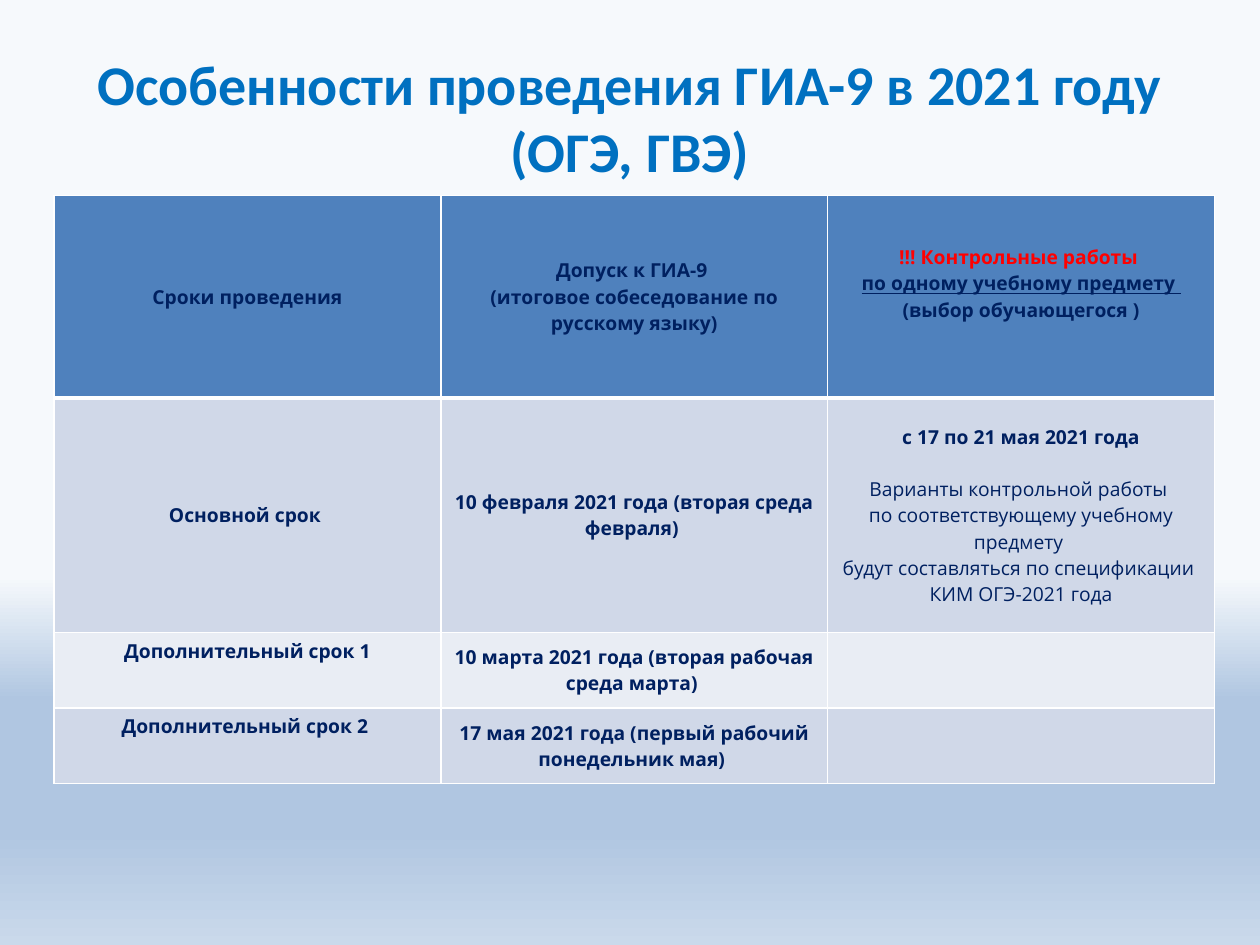
from dataclasses import dataclass

from lxml import etree
from pptx import Presentation
from pptx.dml.color import RGBColor
from pptx.enum.text import MSO_ANCHOR, MSO_AUTO_SIZE, PP_ALIGN
from pptx.oxml.ns import qn
from pptx.util import Inches, Pt

CENTER = PP_ALIGN.CENTER
TOP, MIDDLE = MSO_ANCHOR.TOP, MSO_ANCHOR.MIDDLE
NO_AUTOFIT = MSO_AUTO_SIZE.NONE


@dataclass(frozen=True)
class Theme:
    title_font: str = "Calibri"
    table_font: str = "Open Sans"
    title_size: int = 32
    table_size: int = 11
    title: str = "0070C0"
    text: str = "002060"
    warning: str = "FF0000"
    border: str = "FFFFFF"
    header: str = "4F81BD"
    band_dark: str = "D0D8E8"
    band_light: str = "E9EDF4"
    thin: int = 1
    thick: int = 3
    background: tuple = ((61, "F6F9FC"), (74, "B0C6E1"), (88, "B0C6E1"), (100, "CAD9EB"))


THEME = Theme()


@dataclass(frozen=True)
class Line:
    text: str
    color: str = THEME.text
    bold: bool = True
    underline: bool = False
    space_before: float = 0


@dataclass(frozen=True)
class Entry:
    lines: tuple = ()
    anchor: MSO_ANCHOR = MIDDLE
    bottom_margin: float = 0.04


@dataclass(frozen=True)
class Row:
    height: float
    fill: str
    entries: tuple


COLUMN_WIDTH = 3.07
ROWS = (
    Row(1.61, THEME.header, (
        Entry((Line("Сроки проведения"),)),
        Entry((Line("Допуск к ГИА-9 "),
               Line("(итоговое собеседование по русскому языку)"))),
        Entry((Line("!!! Контрольные работы ", color=THEME.warning),
               Line("по одному учебному предмету ", underline=True),
               Line("(выбор обучающегося )")), bottom_margin=0.25),
    )),
    Row(1.86, THEME.band_dark, (
        Entry((Line("Основной срок "),)),
        Entry((Line("10 февраля 2021 года (вторая среда февраля) "),)),
        Entry((Line("с 17 по 21 мая 2021 года"),
               Line("Варианты контрольной работы ", bold=False, space_before=15),
               Line("по соответствующему учебному предмету ", bold=False),
               Line("будут составляться по спецификации ", bold=False),
               Line("КИМ ОГЭ-2021 года", bold=False))),
    )),
    Row(0.6, THEME.band_light, (
        Entry((Line("Дополнительный срок 1"),), TOP),
        Entry((Line("10 марта 2021 года (вторая рабочая среда марта) "),)),
        Entry(),
    )),
    Row(0.6, THEME.band_dark, (
        Entry((Line("Дополнительный срок 2 "),), TOP),
        Entry((Line("17 мая 2021 года (первый рабочий понедельник мая) "),)),
        Entry(),
    )),
)


def add_run(paragraph, text: str, font: str, size: float, color: str,
            bold: bool = True, underline: bool = False) -> None:
    run = paragraph.add_run()
    run.text = text
    run.font.name = font
    run.font.size = Pt(size)
    run.font.bold = bold
    run.font.underline = underline
    run.font.color.rgb = RGBColor.from_string(color)


def set_background(slide) -> None:
    fill = slide.background.fill
    fill.gradient()
    fill.gradient_angle = 270  # counter-clockwise: runs from top to bottom
    stops = slide.element.find(".//" + qn("a:gsLst"))
    for stop in list(stops):
        stops.remove(stop)
    for percent, color in THEME.background:
        stop = etree.SubElement(stops, qn("a:gs"), pos=str(percent * 1000))
        etree.SubElement(stop, qn("a:srgbClr"), val=color)


def set_borders(cell, top: float, bottom: float) -> None:
    properties = cell._tc.get_or_add_tcPr()
    widths = {"a:lnL": THEME.thin, "a:lnR": THEME.thin, "a:lnT": top, "a:lnB": bottom}
    for index, (side, width) in enumerate(widths.items()):
        border = etree.Element(qn(side), w=str(Pt(width)))
        solid = etree.SubElement(border, qn("a:solidFill"))
        etree.SubElement(solid, qn("a:srgbClr"), val=THEME.border)
        properties.insert(index, border)


def fill_cell(cell, entry: Entry, color: str) -> None:
    cell.fill.solid()
    cell.fill.fore_color.rgb = RGBColor.from_string(color)
    cell.vertical_anchor = entry.anchor
    cell.margin_left = cell.margin_right = Inches(0.09)
    cell.margin_top = Inches(0.04)
    cell.margin_bottom = Inches(entry.bottom_margin)
    frame = cell.text_frame
    for index, line in enumerate(entry.lines):
        paragraph = frame.add_paragraph() if index else frame.paragraphs[0]
        paragraph.alignment = CENTER
        paragraph.space_before = Pt(line.space_before)
        add_run(paragraph, line.text, THEME.table_font, THEME.table_size,
                line.color, line.bold, line.underline)


def add_title(slide) -> None:
    title = slide.shapes.title
    title.left, title.top = Inches(0.5), Inches(0.3)
    title.width, title.height = Inches(9), Inches(1.25)
    frame = title.text_frame
    frame.word_wrap = True
    frame.auto_size = NO_AUTOFIT
    frame.vertical_anchor = MIDDLE
    frame.paragraphs[0].alignment = CENTER
    add_run(frame.paragraphs[0], "Особенности проведения ГИА-9 в 2021 году (ОГЭ, ГВЭ)",
            THEME.title_font, THEME.title_size, THEME.title)


def add_schedule(slide) -> None:
    columns = len(ROWS[0].entries)
    schedule = slide.shapes.add_table(
        len(ROWS), columns, Inches(0.43), Inches(1.55),
        Inches(COLUMN_WIDTH * columns), Inches(sum(row.height for row in ROWS))).table
    for column in schedule.columns:
        column.width = Inches(COLUMN_WIDTH)
    for r, row in enumerate(ROWS):
        schedule.rows[r].height = Inches(row.height)
        # The thick rule separates the header from the first term
        top = THEME.thick if r == 1 else THEME.thin
        bottom = THEME.thick if r == 0 else THEME.thin
        for c, entry in enumerate(row.entries):
            cell = schedule.cell(r, c)
            fill_cell(cell, entry, row.fill)
            set_borders(cell, top, bottom)


def main() -> None:
    deck = Presentation()
    deck.slide_width, deck.slide_height = Inches(10), Inches(7.5)
    slide = deck.slides.add_slide(deck.slide_layouts[5])
    set_background(slide)
    add_title(slide)
    add_schedule(slide)
    deck.save("out.pptx")


if __name__ == "__main__":
    main()
